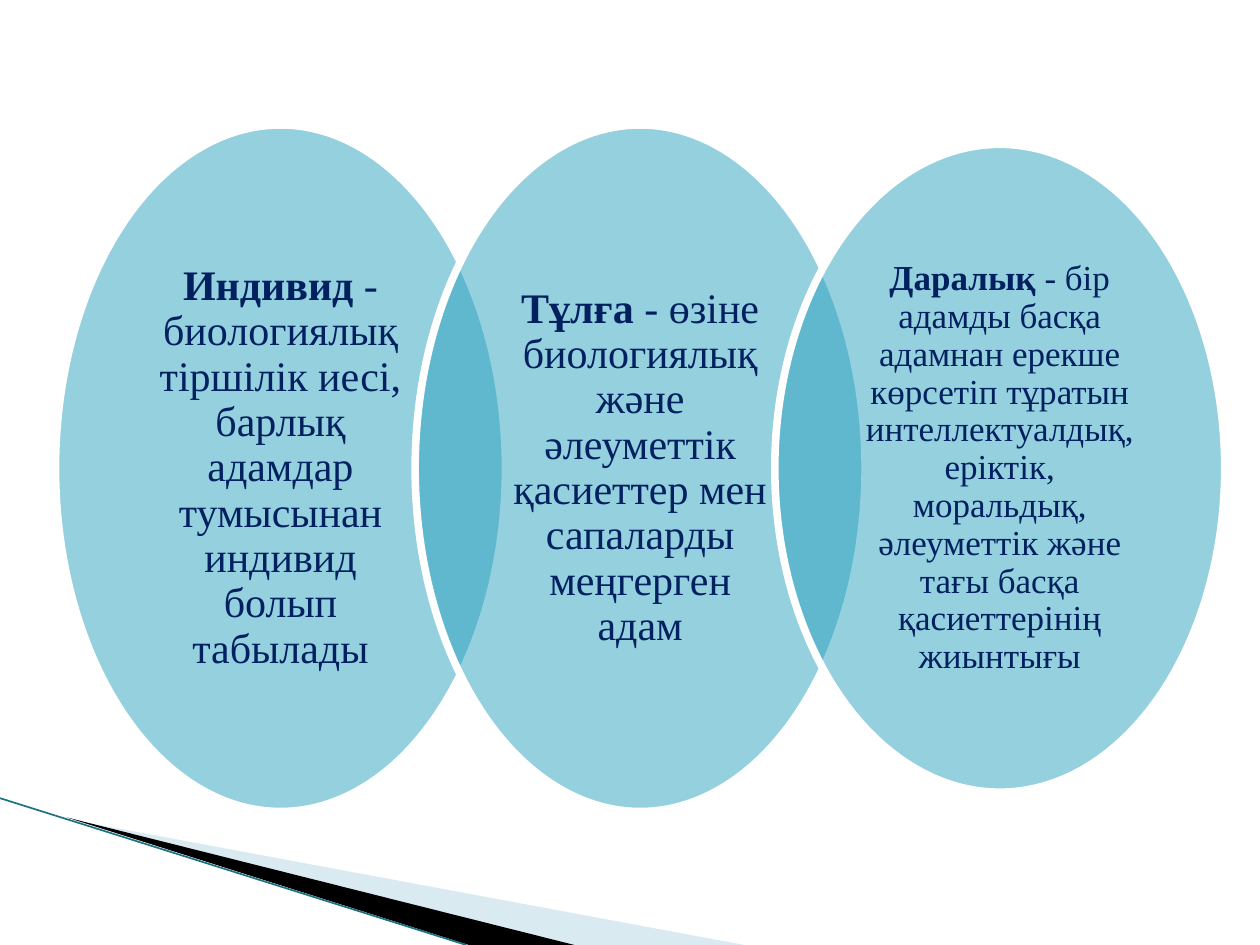
from dataclasses import dataclass
from math import sqrt

from lxml.etree import SubElement
from pptx import Presentation
from pptx.dml.color import RGBColor
from pptx.enum.shapes import MSO_CONNECTOR as Connector, MSO_SHAPE as Preset
from pptx.enum.text import MSO_ANCHOR as Anchor, PP_ALIGN as Align
from pptx.oxml.ns import qn
from pptx.util import Cm, Pt


@dataclass(frozen=True)
class Theme:
    font: str = "Times New Roman"
    large: int = 24
    small: int = 20
    text: str = "002060"
    oval: str = "2DA2BF"
    oval_alpha: int = 50
    outline: str = "FFFFFF"
    outline_width: float = 4.33
    pale: str = "A0CBDC"
    pale_alpha: int = 40
    dark: str = "000000"
    edge: str = "1B7285"
    edge_width: float = 0.95


THEME = Theme()

OVAL_LEFT, OVAL_STEP, OVAL_WIDTH = 1.12, 7.25, 9.07
OVAL_MIDDLE = 9.44
INNER = 1 / sqrt(2)  # side of the rectangle inscribed in an oval

# term, definition, oval height in cm, type size
CONCEPTS = [
    ("Индивид",
     " - биологиялық тіршілік иесі, барлық адамдар тумысынан индивид болып табылады",
     13.84, THEME.large),
    ("Тұлға",
     " - өзіне биологиялық және әлеуметтік қасиеттер мен сапаларды меңгерген адам",
     13.84, THEME.large),
    ("Даралық",
     " - бір адамды басқа адамнан ерекше көрсетіп тұратын интеллектуалдық, еріктік, "
     "моральдық, әлеуметтік және тағы басқа қасиеттерінің жиынтығы",
     13.06, THEME.small),
]


def rgb(value):
    return RGBColor.from_string(value)


def paint(shape, colour, alpha=100):
    """Fill a shape with a colour at the given opacity in percent."""
    shape.shadow.inherit = False
    shape.fill.solid()
    shape.fill.fore_color.rgb = rgb(colour)
    if alpha < 100:
        tint = shape.fill._xPr.find(qn("a:solidFill"))[0]
        SubElement(tint, qn("a:alpha"), val=str(alpha * 1000))


def centred_frame(centre, width, height):
    """Left, top, width and height of a frame centred in an oval's row."""
    return Cm(centre - width / 2), Cm(OVAL_MIDDLE - height / 2), Cm(width), Cm(height)


def add_oval(page, centre, height):
    oval = page.shapes.add_shape(Preset.OVAL, *centred_frame(centre, OVAL_WIDTH, height))
    paint(oval, THEME.oval, THEME.oval_alpha)
    oval.line.color.rgb = rgb(THEME.outline)
    oval.line.width = Pt(THEME.outline_width)


def add_span(para, text, size, bold):
    span = para.add_run()
    span.text = text
    span.font.name = THEME.font
    span.font.size = Pt(size)
    span.font.bold = bold
    span.font.color.rgb = rgb(THEME.text)


def add_definition(page, centre, height, term, definition, size):
    box = page.shapes.add_textbox(
        *centred_frame(centre, OVAL_WIDTH * INNER, height * INNER))
    frame = box.text_frame
    frame.word_wrap = True
    frame.vertical_anchor = Anchor.MIDDLE
    frame.margin_left = frame.margin_right = Cm(0.5)
    frame.margin_top = frame.margin_bottom = Cm(0.08)
    para = frame.paragraphs[0]
    para.alignment = Align.CENTER
    para.line_spacing = 0.9
    add_span(para, term, size, True)
    add_span(para, definition, size, False)


def add_wedge(page, points, colour, alpha=100):
    start, *others = [(Cm(x), Cm(y)) for x, y in points]
    builder = page.shapes.build_freeform(*start)
    builder.add_line_segments(others)
    wedge = builder.convert_to_shape()
    paint(wedge, colour, alpha)
    wedge.line.fill.background()


def add_edge(page, start, end):
    edge = page.shapes.add_connector(
        Connector.STRAIGHT, *(Cm(value) for value in start + end))
    edge.line.color.rgb = rgb(THEME.edge)
    edge.line.width = Pt(THEME.edge_width)
    SubElement(edge._element.spPr, qn("a:effectLst"))


def add_corner(page):
    add_wedge(page, [(1.4, 16.52), (15, 19.05), (11.58, 19.05)],
              THEME.pale, THEME.pale_alpha)
    add_wedge(page, [(1.35, 16.48), (11.58, 19.05), (9.45, 19.05)], THEME.dark)
    add_edge(page, (0, 16.09), (9.4, 19.05))


def main():
    deck = Presentation()
    deck.slide_width, deck.slide_height = Cm(25.4), Cm(19.05)
    page = deck.slides.add_slide(deck.slide_layouts[6])
    add_corner(page)
    for index, (term, definition, height, size) in enumerate(CONCEPTS):
        centre = OVAL_LEFT + OVAL_WIDTH / 2 + index * OVAL_STEP
        add_oval(page, centre, height)
        add_definition(page, centre, height, term, definition, size)
    deck.save("out.pptx")


if __name__ == "__main__":
    main()
